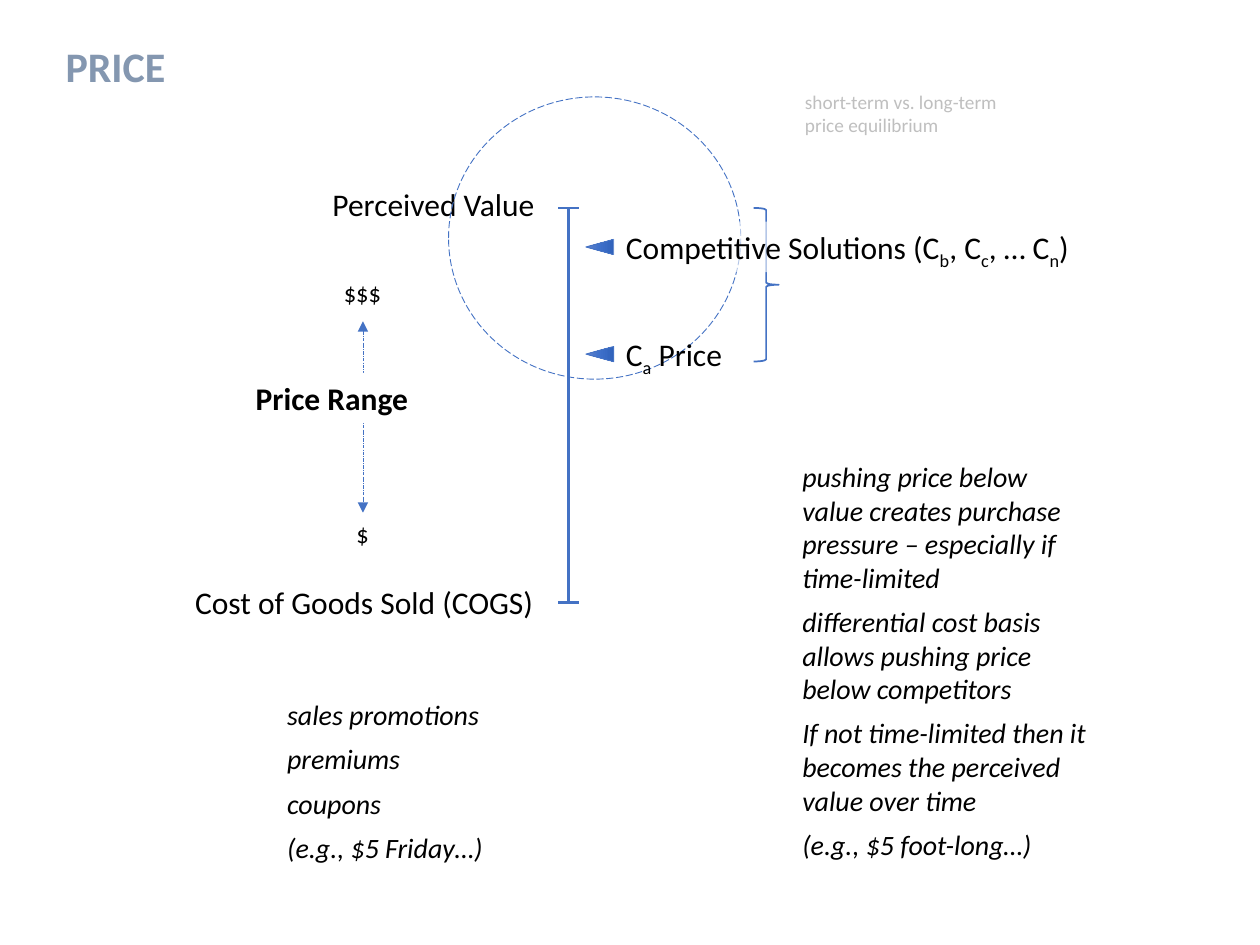
from copy import deepcopy

from pptx import Presentation
from pptx.dml.color import RGBColor
from pptx.enum.dml import MSO_LINE
from pptx.enum.shapes import MSO_CONNECTOR, MSO_SHAPE
from pptx.enum.text import MSO_ANCHOR, MSO_AUTO_SIZE, PP_ALIGN
from pptx.oxml.ns import qn
from pptx.oxml.xmlchemy import OxmlElement
from pptx.util import Pt

STRAIGHT = MSO_CONNECTOR.STRAIGHT
RECTANGLE, ELLIPSE = MSO_SHAPE.RECTANGLE, MSO_SHAPE.OVAL
TRIANGLE, BRACE = MSO_SHAPE.ISOSCELES_TRIANGLE, MSO_SHAPE.RIGHT_BRACE
LONG_DASH, LONG_DASH_DOT = MSO_LINE.LONG_DASH, MSO_LINE.LONG_DASH_DOT
LEFT, TOP = PP_ALIGN.LEFT, MSO_ANCHOR.TOP
NO_AUTOFIT = MSO_AUTO_SIZE.NONE

COLORS = {
    "title": "8497B0", "text": "000000", "faint": "BFBFBF",
    "line": "4472C4", "paper": "FFFFFF",
}
MARKER_STOPS = [(0, "6183CB"), (0.5, "3E70CA"), (1, "3062BB")]
FONT = "Calibri"


class PriceSlide:
    def __init__(self, page):
        self.page = page

    def color(self, name):
        return RGBColor.from_string(COLORS[name])

    def set_text(self, shape, texts, size, color="text", bold=False, italic=False,
                 wrap=False, before=0):
        frame = shape.text_frame
        frame.word_wrap = wrap
        frame.auto_size = NO_AUTOFIT
        frame.vertical_anchor = TOP
        frame.margin_left = frame.margin_right = Pt(7.2)
        frame.margin_top = frame.margin_bottom = Pt(3.6)
        frame.text = "\n".join("".join(parts) for parts in texts)
        for para, parts in zip(frame.paragraphs, texts):
            para.alignment = LEFT
            para.line_spacing = 1.0
            para.space_before = Pt(before)
            para.runs[0].text = parts[0]
            for part in parts[1:]:
                para.add_run().text = part
            for index, span in enumerate(para.runs):
                span.font.name = FONT
                span.font.size = Pt(size)
                span.font.bold = bold
                span.font.italic = italic
                span.font.color.rgb = self.color(color)
                if index % 2:
                    span.font._element.set("baseline", "-25000")

    def title(self, area, text):
        box = self.page.shapes.title
        box.left, box.top, box.width, box.height = map(Pt, area)
        self.set_text(box, [[text]], 24, "title", bold=True, wrap=True)

    def text(self, area, texts, size=18, **style):
        box = self.page.shapes.add_textbox(*map(Pt, area))
        self.set_text(box, texts, size, **style)

    def notes(self, area, lines):
        self.text(area, [[line] for line in lines], 16, italic=True, wrap=True, before=6)

    def label(self, area, parts, size=18, bold=False, opacity=None):
        box = self.page.shapes.add_shape(RECTANGLE, *map(Pt, area))
        box.shadow.inherit = False
        box.line.fill.background()
        box.fill.solid()
        box.fill.fore_color.rgb = self.color("paper")
        if opacity:
            alpha = OxmlElement("a:alpha")
            alpha.set("val", str(opacity * 1000))
            box._element.spPr.find(qn("a:solidFill"))[0].append(alpha)
        self.set_text(box, [parts], size, bold=bold)

    def outline(self, kind, area, weight, dash=None):
        shape = self.page.shapes.add_shape(kind, *map(Pt, area))
        shape.shadow.inherit = False
        shape.fill.background()
        shape.line.color.rgb = self.color("line")
        shape.line.width = Pt(weight)
        if dash:
            shape.line.dash_style = dash
        return shape

    def marker(self, top):
        shape = self.outline(TRIANGLE, (338.4, top, 8.64, 15.84), 0.5)
        shape.rotation = 270
        shape.fill.gradient()
        shape.fill.gradient_angle = 270
        stops = shape._element.spPr.find(qn("a:gradFill")).find(qn("a:gsLst"))
        stops.insert(1, deepcopy(stops[0]))
        for stop, (position, value) in zip(shape.fill.gradient_stops, MARKER_STOPS):
            stop.position = position
            stop.color.rgb = RGBColor.from_string(value)

    def line(self, start, end, weight=1.5, dash=None, arrows=False):
        line = self.page.shapes.add_connector(STRAIGHT, *map(Pt, start + end))
        line.line.color.rgb = self.color("line")
        line.line.width = Pt(weight)
        if dash:
            line.line.dash_style = dash
        if arrows:
            for tag in ("a:headEnd", "a:tailEnd"):
                arrow = OxmlElement(tag)
                arrow.set("type", "triangle")
                line._element.spPr.find(qn("a:ln")).append(arrow)
        line._element.spPr.append(OxmlElement("a:effectLst"))


def main():
    deck = Presentation()
    deck.slide_width, deck.slide_height = Pt(720), Pt(540)
    slide = PriceSlide(deck.slides.add_slide(deck.slide_layouts[5]))

    axis, value_level, cost_level = 324.9, 118.8, 344.2
    slide.title((30.24, 19.44, 303.84, 36), "PRICE")
    slide.text((104.4, 329.8, 210.2, 28.8), [["Cost of Goods Sold (COGS)"]])
    slide.text((182.9, 102.2, 131, 28.8), [["Perceived Value"]])

    slide.line((axis, value_level), (axis, cost_level))
    for level in (value_level, cost_level):
        slide.line((axis - 6, level), (axis + 6, level))

    slide.line((207.4, 183.6), (207.4, 293), 0.25, LONG_DASH_DOT, arrows=True)
    slide.label((139, 213.1, 102.2, 28.8), ["Price Range"], bold=True)
    slide.outline(ELLIPSE, (256.3, 55.4, 167, 161.3), 0.5, LONG_DASH)
    slide.label((196.6, 293, 21.6, 24.5), ["$"], 14)
    slide.label((189.4, 155.5, 36, 24.5), ["$$$"], 14)

    for top in (133.2, 194.4):
        slide.marker(top)
    slide.text((350.6, 187.9, 70.6, 28.8), [["C", "a", " Price"]])
    slide.outline(BRACE, (430.6, value_level, 14.4, 87.8), 1)
    slide.label((350.6, 126.7, 282.2, 28.8),
                ["Competitive Solutions (C", "b", ", C", "c", ", … C", "n", ")"],
                opacity=60)

    slide.notes((451.4, 259.2, 177.1, 239), [
        "pushing price below value creates purchase pressure – especially if time-limited",
        "differential cost basis allows pushing price below competitors",
        "If not time-limited then it becomes the perceived value over time",
        "(e.g., $5 foot-long…)",
    ])
    slide.notes((157, 395.3, 177.1, 103),
                ["sales promotions", "premiums", "coupons", "(e.g., $5 Friday…)"])
    slide.text((452.9, 48.2, 130.3, 33.8),
               [["short-term vs. long-term price equilibrium"]], 11,
               color="faint", wrap=True)

    deck.save("out.pptx")


if __name__ == "__main__":
    main()
